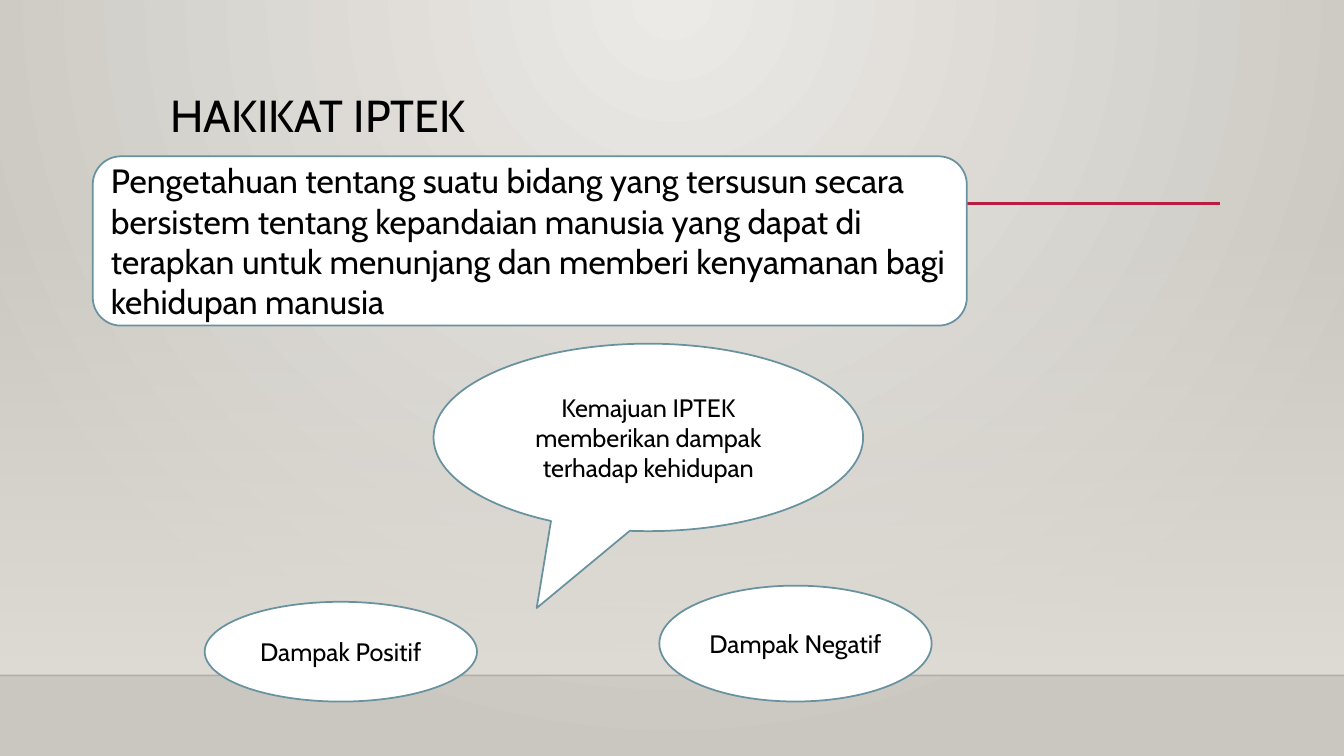
from lxml import etree
from pptx import Presentation
from pptx.dml.color import RGBColor
from pptx.enum.shapes import MSO_CONNECTOR, MSO_SHAPE
from pptx.enum.text import MSO_ANCHOR, PP_ALIGN
from pptx.oxml.ns import qn
from pptx.util import Inches, Pt

STRAIGHT = MSO_CONNECTOR.STRAIGHT
RECTANGLE = MSO_SHAPE.RECTANGLE
ROUNDED = MSO_SHAPE.ROUNDED_RECTANGLE
OVAL = MSO_SHAPE.OVAL
CALLOUT = MSO_SHAPE.OVAL_CALLOUT
LEFT, CENTER = PP_ALIGN.LEFT, PP_ALIGN.CENTER
TOP, MIDDLE = MSO_ANCHOR.TOP, MSO_ANCHOR.MIDDLE
WIDTH, HEIGHT = Inches(13.33), Inches(7.5)
FONT = "Cabin"


def place(left, top, width, height):
    """Turn percentages of the slide's size into lengths."""
    return [round(share * size / 100) for share, size in
            ((left, WIDTH), (top, HEIGHT), (width, WIDTH), (height, HEIGHT))]


def color(hex_string):
    """Return the colour for a hex string."""
    return RGBColor.from_string(hex_string)


def add_child(parent, tag, **attributes):
    """Append a DrawingML element with its attributes."""
    return etree.SubElement(parent, qn(tag), attributes)


def set_gradient(fill, owner, hex_strings):
    """Give a fill two colour stops and return its emptied gradient element."""
    fill.gradient()
    for stop, hex_string in zip(fill.gradient_stops, hex_strings):
        stop.color.rgb = color(hex_string)
    gradient = owner.find(".//" + qn("a:gradFill"))
    stops = gradient.find(qn("a:gsLst"))
    for stop, position in zip(stops, ("0", "100000")):
        stop.set("pos", position)
    for child in list(gradient):
        if child is not stops:
            gradient.remove(child)
    return gradient


def paint_background(slide):
    """Light the slide from the middle of its top edge."""
    gradient = set_gradient(slide.background.fill, slide.element, ("ECEAE7", "CAC7C1"))
    circle = add_child(gradient, "a:path", path="circle")
    add_child(circle, "a:fillToRect", l="43000", t="0", r="43000", b="100000")


def add_wall(slide, *shares):
    """Add a band that fades in from transparent to opaque."""
    wall = slide.shapes.add_shape(RECTANGLE, *place(*shares))
    wall.shadow.inherit = False
    wall.line.fill.background()
    gradient = set_gradient(wall.fill, wall.element, ("DFDBD5", "DFDBD5"))
    add_child(gradient.find(".//" + qn("a:srgbClr")), "a:alpha", val="0")
    add_child(gradient, "a:lin", ang="5400000", scaled="0")


def add_rule(slide, start, end, top, hex_string, weight, opacity=100):
    """Add a horizontal line across the slide."""
    left, height, right, _ = place(start, top, end, 0)
    rule = slide.shapes.add_connector(STRAIGHT, left, height, right, height)
    rule.line.color.rgb = color(hex_string)
    rule.line.width = Pt(weight)
    properties = rule.element.spPr
    if opacity < 100:
        add_child(properties.find(".//" + qn("a:srgbClr")), "a:alpha",
                  val=str(opacity * 1000))
    add_child(properties, "a:effectLst")


def write(shape, text, size, alignment, anchor):
    """Write one black paragraph into a shape."""
    frame = shape.text_frame
    frame.word_wrap = True
    frame.vertical_anchor = anchor
    paragraph = frame.paragraphs[0]
    paragraph.text = text
    paragraph.alignment = alignment
    paragraph.font.name = FONT
    paragraph.font.size = Pt(size)
    paragraph.font.color.rgb = color("000000")
    return paragraph


def add_title(slide, text, *shares):
    """Move and format the title placeholder."""
    title = slide.shapes.title
    title.left, title.top, title.width, title.height = place(*shares)
    write(title, text, 32, LEFT, TOP).line_spacing = 0.9


def add_bubble(slide, kind, text, shares, size=18, alignment=CENTER):
    """Add a white outlined shape with text."""
    bubble = slide.shapes.add_shape(kind, *place(*shares))
    bubble.shadow.inherit = False
    bubble.fill.solid()
    bubble.fill.fore_color.rgb = color("FFFFFF")
    bubble.line.color.rgb = color("6892A0")
    bubble.line.width = Pt(1.25)
    write(bubble, text, size, alignment, MIDDLE)
    return bubble


def main():
    """Build and save the slide."""
    presentation = Presentation()
    presentation.slide_width, presentation.slide_height = WIDTH, HEIGHT
    slide = presentation.slides.add_slide(presentation.slide_layouts[5])
    paint_background(slide)
    add_wall(slide, 0, 29.47, 100, 59.87)
    add_rule(slide, 0, 100, 89.33, "000001", 1, opacity=20)
    add_rule(slide, 11.93, 90.77, 26.93, "B71E42", 2.5)
    add_title(slide, "HAKIKAT IPTEK", 11.93, 11.73, 78.77, 15.33)
    add_bubble(slide, ROUNDED,
               "Pengetahuan tentang suatu bidang yang tersusun secara bersistem "
               "tentang kepandaian manusia yang dapat di terapkan untuk menunjang "
               "dan memberi kenyamanan bagi kehidupan manusia",
               (6.9, 20.67, 65.04, 22.4), 24, LEFT)
    callout = add_bubble(slide, CALLOUT,
                         "Kemajuan IPTEK memberikan dampak terhadap kehidupan",
                         (32.26, 45.47, 31.96, 24.8))
    callout.adjustments[0], callout.adjustments[1] = -0.26, 0.91
    add_bubble(slide, OVAL, "Dampak Positif", (15.23, 79.6, 20.26, 13.2))
    add_bubble(slide, OVAL, "Dampak Negatif", (49.06, 77.47, 20.26, 15.33))
    presentation.save("out.pptx")


if __name__ == "__main__":
    main()
